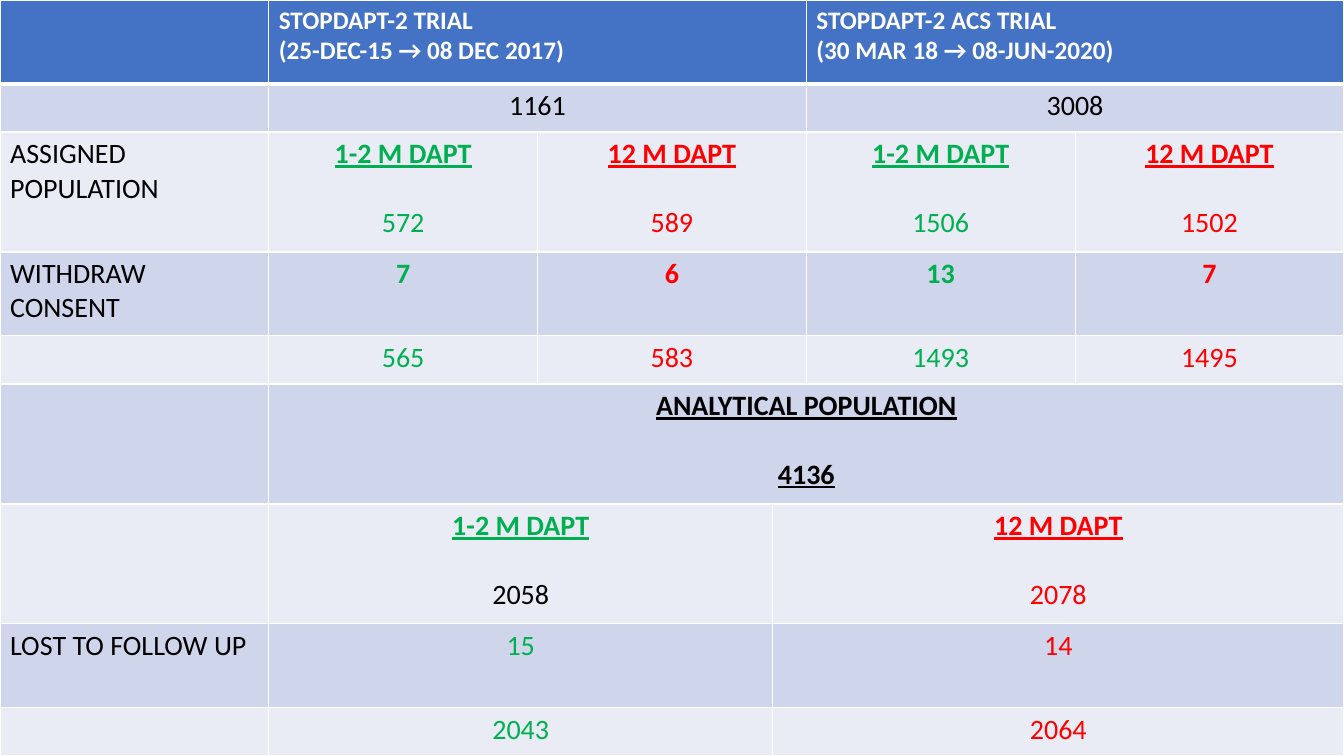
import pptx
import pptx.util
import pptx.dml.color
import pptx.enum.text
import pptx.oxml
import pptx.oxml.ns

Inches, Pt = pptx.util.Inches, pptx.util.Pt
RGB = pptx.dml.color.RGBColor
ALIGN = pptx.enum.text.PP_ALIGN

WHITE = RGB(0xFF, 0xFF, 0xFF)
BLACK = RGB(0, 0, 0)
GREEN = RGB(0x00, 0xB0, 0x50)
RED = RGB(0xFF, 0, 0)
BLUE = RGB(0x44, 0x72, 0xC4)
DARK = RGB(0xCF, 0xD5, 0xEA)
LIGHT = RGB(0xE9, 0xEB, 0xF5)

deck = pptx.Presentation()
deck.slide_width, deck.slide_height = Inches(13.33), Inches(7.5)
slide = deck.slides.add_slide(deck.slide_layouts[6])

# Column shares: five equal fifths, the third one split by the arm border
fifth = deck.slide_width / 5
split = 0.875
widths = [fifth, fifth, fifth * split, fifth * (1 - split), fifth, fifth]

# Row heights in inches
LOW, MID, TALL = 0.48, 0.83, 1.19
heights = [MID, LOW, TALL, MID, LOW, TALL, TALL, MID, LOW]

# Cell groups: (first column, number of columns)
trials = [(1, 3), (4, 2)]
arms = [(1, 1), (2, 2), (4, 1), (5, 1)]
pools = [(1, 2), (3, 3)]
whole = [(1, 5)]

# Each line of a cell is (text, colour, style): b bold, u underlined
short = ("1-2 M DAPT", GREEN, "bu")
long = ("12 M DAPT", RED, "bu")
hues = [GREEN, RED, GREEN, RED]
rows = [
    ("", trials, [
        [("STOPDAPT-2 TRIAL", WHITE, "b"), ("(25-DEC-15 → 08 DEC 2017)", WHITE, "b")],
        [("STOPDAPT-2 ACS TRIAL", WHITE, "b"), ("(30 MAR 18 → 08-JUN-2020)", WHITE, "b")]]),
    ("", trials, [[("1161", BLACK, "")], [("3008", BLACK, "")]]),
    ("ASSIGNED POPULATION", arms, [
        [head, (num, head[1], "")] for head, num in
        zip([short, long] * 2, ["572", "589", "1506", "1502"])]),
    ("WITHDRAW CONSENT", arms, [
        [(num, hue, "b")] for num, hue in zip(["7", "6", "13", "7"], hues)]),
    ("", arms, [
        [(num, hue, "")] for num, hue in zip(["565", "583", "1493", "1495"], hues)]),
    ("", whole, [[("ANALYTICAL POPULATION", BLACK, "bu"), ("4136", BLACK, "bu")]]),
    ("", pools, [[short, ("2058", BLACK, "")], [long, ("2078", RED, "")]]),
    ("LOST TO FOLLOW UP", pools, [[("15", GREEN, "")], [("14", RED, "")]]),
    ("", pools, [[("2043", GREEN, "")], [("2064", RED, "")]]),
]

# Table grid
frame = slide.shapes.add_table(len(rows), len(widths), 0, 0,
                               deck.slide_width, deck.slide_height)
table = frame.table
for col, width in zip(table.columns, widths):
    col.width = round(width)
for row, height in zip(table.rows, heights):
    row.height = Inches(height)

# Fills and white borders, with a thick rule under the header
for r in range(len(rows)):
    for c in range(len(widths)):
        cell = table.cell(r, c)
        cell.fill.solid()
        cell.fill.fore_color.rgb = BLUE if r == 0 else DARK if r % 2 else LIGHT
        props = cell._tc.get_or_add_tcPr()
        for i, side in enumerate(["lnL", "lnR", "lnT", "lnB"]):
            thick = (r, side) in [(0, "lnB"), (1, "lnT")]
            props.insert(i, pptx.oxml.parse_xml(
                f'<a:{side} {pptx.oxml.ns.nsdecls("a")} w="{Pt(3 if thick else 1)}">'
                f'<a:solidFill><a:srgbClr val="{WHITE}"/></a:solidFill></a:{side}>'))

# Text
for r, (label, groups, texts) in enumerate(rows):
    cells = [(0, 1, [(label, BLACK, "")])] if label else []
    cells += [(first, count, lines) for (first, count), lines in zip(groups, texts)]
    for first, count, lines in cells:
        cell = table.cell(r, first)
        if count > 1:
            cell.merge(table.cell(r, first + count - 1))
        for i, (text, hue, style) in enumerate(lines):
            box = cell.text_frame
            para = box.add_paragraph() if i else box.paragraphs[0]
            if r and first:
                para.alignment = ALIGN.CENTER
                para.space_before = Pt(24.4 * i)
            run = para.add_run()
            run.text = text
            run.font.name = "Calibri"
            run.font.size = Pt(20 if r else 18)
            run.font.bold = "b" in style
            run.font.underline = "u" in style
            run.font.color.rgb = hue

deck.save("out.pptx")
